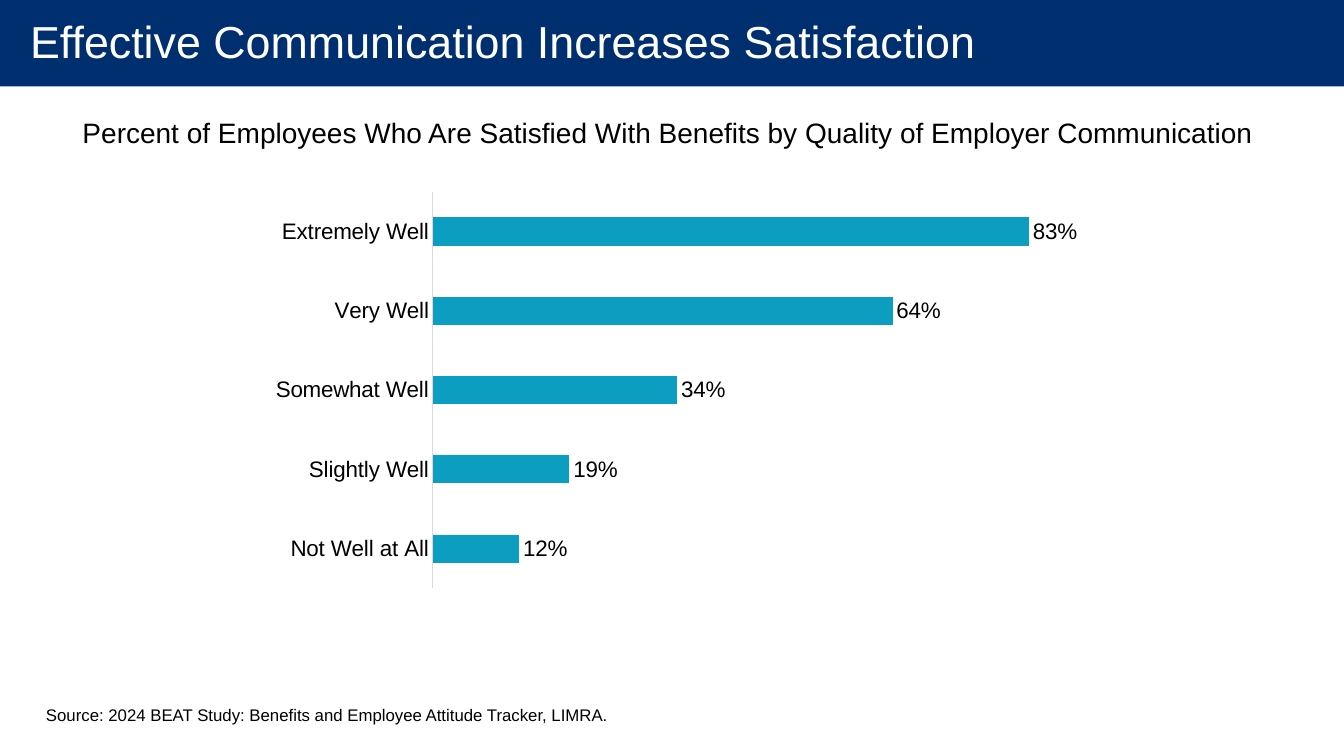
"""Build the slide on employer communication and benefits satisfaction."""
from dataclasses import dataclass

from lxml.etree import SubElement
from pptx import Presentation
from pptx.chart.chart import Chart
from pptx.chart.data import CategoryChartData
from pptx.dml.color import RGBColor
from pptx.enum.chart import XL_CHART_TYPE, XL_LABEL_POSITION, XL_TICK_MARK
from pptx.enum.shapes import MSO_SHAPE
from pptx.enum.text import MSO_ANCHOR
from pptx.oxml.ns import qn
from pptx.slide import Slide
from pptx.text.text import Font
from pptx.util import Cm, Pt

COLORS = {
    "banner": "002F70",
    "title": "FFFFFF",
    "text": "000000",
    "bar": "0B9EC1",
    "axis": "D9D9D9",
}
SATISFACTION = {
    "Not Well at All": 0.12,
    "Slightly Well": 0.19,
    "Somewhat Well": 0.34,
    "Very Well": 0.64,
    "Extremely Well": 0.83,
}
PLOT_LAYOUT = {"x": 0.277, "y": 0.135, "w": 0.723, "h": 0.755}


@dataclass(frozen=True)
class Label:
    text: str
    left: float
    top: float
    width: float
    height: float
    size: int
    color: str = "text"
    margin_left: float = 0.25
    margin_top: float = 0.13
    anchor: MSO_ANCHOR = MSO_ANCHOR.TOP


LABELS = [
    Label("Effective Communication Increases Satisfaction",
          0, -0.2, 33.87, 2.46, 32, "title", 0.76, 0, MSO_ANCHOR.MIDDLE),
    Label("Percent of Employees Who Are Satisfied With Benefits by Quality of Employer Communication",
          1.83, 2.77, 30.23, 1.12, 20),
    Label("Source: 2024 BEAT Study: Benefits and Employee Attitude Tracker, LIMRA.",
          0.91, 17.63, 14.81, 0.76, 12),
]


def rgb(name: str) -> RGBColor:
    return RGBColor.from_string(COLORS[name])


def set_attributes(target: object, values: dict) -> None:
    for name, value in values.items():
        setattr(target, name, value)


def style_font(font: Font, size: int, color: str) -> None:
    set_attributes(font, {"name": "Arial", "size": Pt(size), "bold": False})
    font.color.rgb = rgb(color)


def add_banner(slide: Slide) -> None:
    shape = slide.shapes.add_shape(MSO_SHAPE.RECTANGLE, 0, 0, Cm(33.87), Cm(2.18))
    shape.shadow.inherit = False
    shape.fill.solid()
    shape.fill.fore_color.rgb = rgb("banner")
    shape.line.fill.background()


def add_label(slide: Slide, label: Label) -> None:
    shape = slide.shapes.add_textbox(
        Cm(label.left), Cm(label.top), Cm(label.width), Cm(label.height))
    set_attributes(shape.text_frame, {
        "word_wrap": True,
        "vertical_anchor": label.anchor,
        "margin_left": Cm(label.margin_left),
        "margin_right": Cm(0.25),
        "margin_top": Cm(label.margin_top),
        "margin_bottom": Cm(label.margin_top),
    })
    paragraph = shape.text_frame.paragraphs[0]
    run = paragraph.add_run()
    run.text = label.text
    style_font(run.font, label.size, label.color)


def place_plot(chart: Chart) -> None:
    plot_area = chart.element.find(".//" + qn("c:plotArea"))
    layout = plot_area.find(qn("c:layout"))
    if layout is None:
        layout = SubElement(plot_area, qn("c:layout"))
        plot_area.insert(0, layout)
    manual = SubElement(layout, qn("c:manualLayout"))
    settings = {"layoutTarget": "inner", "xMode": "edge", "yMode": "edge", **PLOT_LAYOUT}
    for tag, value in settings.items():
        SubElement(manual, qn(f"c:{tag}")).set("val", str(value))


def add_satisfaction_chart(slide: Slide) -> None:
    data = CategoryChartData(number_format="0%")
    data.categories = list(SATISFACTION)
    data.add_series("Series 1", list(SATISFACTION.values()))
    chart = slide.shapes.add_chart(
        XL_CHART_TYPE.BAR_CLUSTERED, Cm(4.67), Cm(3.05), Cm(22.53), Cm(13.23), data).chart
    set_attributes(chart, {"has_legend": False, "has_title": False})
    style_font(chart.font, 16, "text")

    set_attributes(chart.value_axis, {
        "visible": False,
        "has_major_gridlines": False,
        "minimum_scale": 0,
        "maximum_scale": 0.9,
    })
    axis = chart.category_axis
    set_attributes(axis, {
        "major_tick_mark": XL_TICK_MARK.NONE,
        "minor_tick_mark": XL_TICK_MARK.NONE,
    })
    axis.format.line.color.rgb = rgb("axis")
    axis.format.line.width = Pt(0.75)
    style_font(axis.tick_labels.font, 16, "text")

    plot = chart.plots[0]
    set_attributes(plot, {"gap_width": 182, "vary_by_categories": False})
    series = plot.series[0]
    series.format.fill.solid()
    series.format.fill.fore_color.rgb = rgb("bar")
    labels = series.data_labels
    set_attributes(labels, {
        "show_value": True,
        "position": XL_LABEL_POSITION.OUTSIDE_END,
        "number_format": "0%",
        "number_format_is_linked": False,
    })
    style_font(labels.font, 16, "text")
    place_plot(chart)


def main() -> None:
    presentation = Presentation()
    set_attributes(presentation, {"slide_width": Cm(33.87), "slide_height": Cm(19.05)})
    slide = presentation.slides.add_slide(presentation.slide_layouts[6])
    add_banner(slide)
    add_satisfaction_chart(slide)
    for label in LABELS:
        add_label(slide, label)
    presentation.save("out.pptx")


if __name__ == "__main__":
    main()
